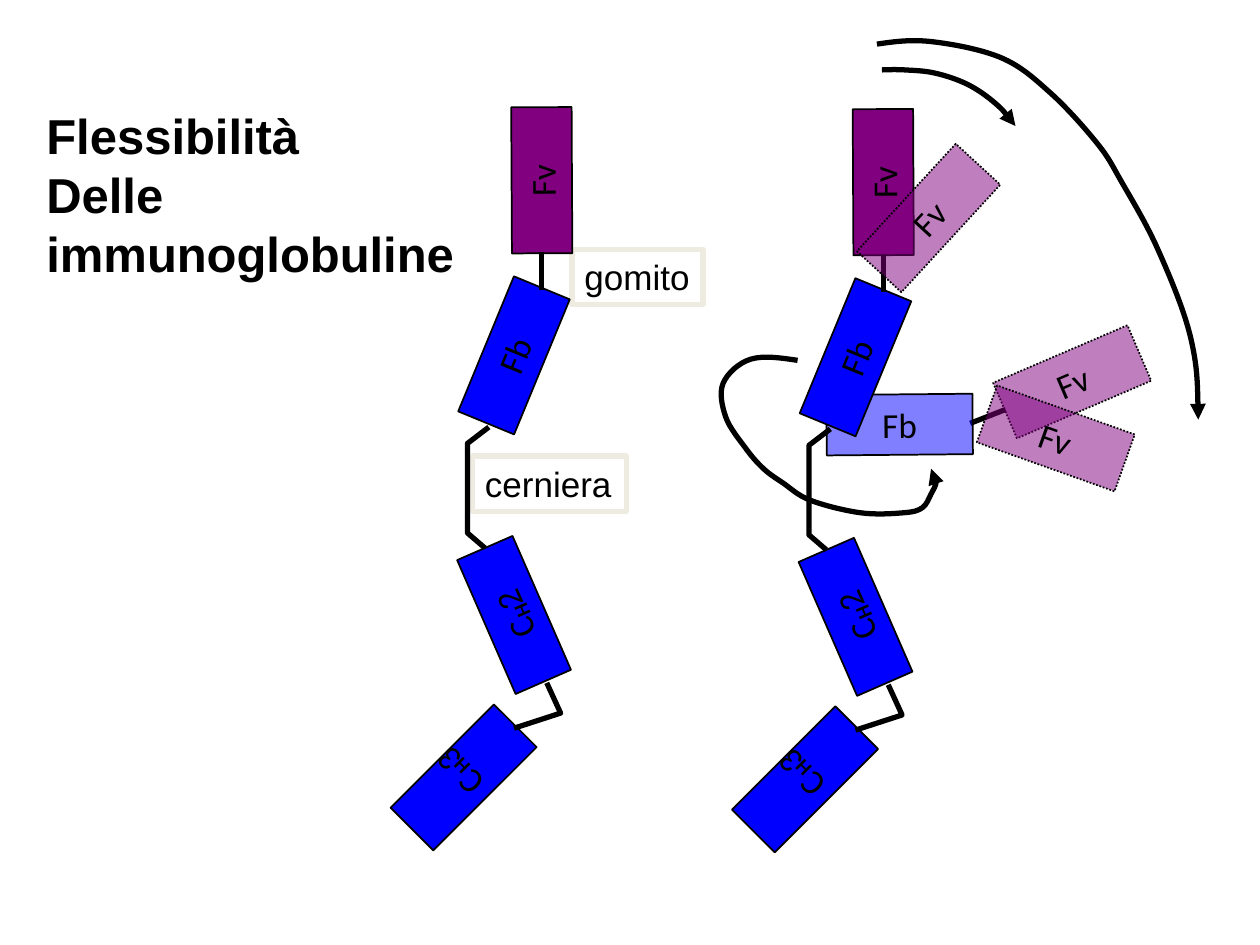
from lxml import etree
from pptx import Presentation
from pptx.dml.color import RGBColor
from pptx.enum.dml import MSO_LINE
from pptx.enum.shapes import MSO_CONNECTOR, MSO_SHAPE
from pptx.enum.text import MSO_ANCHOR, MSO_AUTO_SIZE, PP_ALIGN
from pptx.oxml.ns import qn
from pptx.util import Inches, Pt

RECTANGLE, STRAIGHT = MSO_SHAPE.RECTANGLE, MSO_CONNECTOR.STRAIGHT
SOLID, DOTTED = MSO_LINE.SOLID, MSO_LINE.ROUND_DOT
MIDDLE, TOP = MSO_ANCHOR.MIDDLE, MSO_ANCHOR.TOP
CENTER, LEFT = PP_ALIGN.CENTER, PP_ALIGN.LEFT
GROW, FIXED = MSO_AUTO_SIZE.SHAPE_TO_FIT_TEXT, MSO_AUTO_SIZE.NONE

BLACK, BLUE, PURPLE, CREAM = "000000", "0000FF", "800080", "EEECE1"
COLOUR = RGBColor.from_string

presentation = Presentation()
presentation.slide_width, presentation.slide_height = Inches(10), Inches(7.5)
CELL = presentation.slide_width / 100
slide = presentation.slides.add_slide(presentation.slide_layouts[6])

DOMAIN = {"width": 11.6, "height": 4.8, "rotation": 0, "fill": BLUE, "alpha": 100,
          "line": BLACK, "weight": 1, "dash": SOLID, "font": "Calibri", "size": 20,
          "bold": False, "align": CENTER, "anchor": MIDDLE, "wrap": False, "fit": FIXED}
VARIABLE = DOMAIN | {"fill": PURPLE}
GHOST_FB = DOMAIN | {"alpha": 50}
GHOST_FV = VARIABLE | {"alpha": 50, "dash": DOTTED}
LABEL = DOMAIN | {"height": 4.4, "fill": None, "line": CREAM, "weight": 3,
                  "font": "Arial", "align": LEFT, "anchor": TOP, "fit": GROW}
TITLE = LABEL | {"width": 35.4, "height": 15.1, "line": None, "size": 28,
                 "bold": True, "wrap": True}


def add_box(paragraphs, left, top, style):
    area = [round(CELL * value) for value in (left, top, style["width"], style["height"])]
    if style["line"]:
        shape = slide.shapes.add_shape(RECTANGLE, *area)
        shape.shadow.inherit = False
        shape.rotation = style["rotation"]
        shape.line.color.rgb = COLOUR(style["line"])
        for name, value in {"width": Pt(style["weight"]), "dash_style": style["dash"]}.items():
            setattr(shape.line, name, value)
        shape.fill.background()
    else:
        shape = slide.shapes.add_textbox(*area)
    if style["fill"]:
        shape.fill.solid()
        shape.fill.fore_color.rgb = COLOUR(style["fill"])
        if style["alpha"] < 100:
            fill_colour = shape._element.spPr.find(qn("a:solidFill"))[0]
            etree.SubElement(fill_colour, qn("a:alpha")).set("val", str(style["alpha"] * 1000))
    frame = shape.text_frame
    for name, value in {"word_wrap": style["wrap"], "auto_size": style["fit"],
                        "vertical_anchor": style["anchor"]}.items():
        setattr(frame, name, value)
    for index, parts in enumerate(paragraphs):
        paragraph = frame.add_paragraph() if index else frame.paragraphs[0]
        paragraph.alignment = style["align"]
        for part in parts:
            run = paragraph.add_run()
            run.text = part
            run.font.color.rgb = COLOUR(BLACK)
            is_subscript = part == "H"
            for name, value in {"name": style["font"], "size": Pt(style["size"]),
                                "bold": style["bold"] or is_subscript}.items():
                setattr(run.font, name, value)
            if is_subscript:
                run._r.get_or_add_rPr().set("baseline", "-6000")
    return shape


def add_path(points, curved=False):
    start, *rest = [(round(CELL * x), round(CELL * y)) for x, y in points]
    if len(rest) == 1:
        shape = slide.shapes.add_connector(STRAIGHT, *start, *rest[0])
        etree.SubElement(shape._element.spPr, qn("a:effectLst"))
    else:
        knots = [start, *rest]
        if curved:
            handles = []
            for before, knot, after in zip(knots, knots[1:], knots[2:]):
                pull = [(b - a) / 6 for a, b in zip(before, after)]
                handles += [[k - p for k, p in zip(knot, pull)], knot,
                            [k + p for k, p in zip(knot, pull)]]
            first = [(a + b) / 2 for a, b in zip(start, handles[0])]
            last = [(a + b) / 2 for a, b in zip(handles[-1], knots[-1])]
            rest = [first, *handles, last, knots[-1]]
        builder = slide.shapes.build_freeform(*start)
        builder.add_line_segments(rest, close=False)
        shape = builder.convert_to_shape()
        shape.shadow.inherit = False
        shape.fill.background()
    shape.line.color.rgb = COLOUR(BLACK)
    shape.line.width = Pt(3)
    if curved:
        outline = shape._element.spPr.find(".//" + qn("a:path"))
        segments = outline.findall(qn("a:lnTo"))
        for index, segment in enumerate(segments):
            if index % 3 == 0:
                curve = etree.SubElement(outline, qn("a:cubicBezTo"))
            curve.append(segment[0])
            outline.remove(segment)
        line = shape._element.spPr.find(qn("a:ln"))
        etree.SubElement(line, qn("a:tailEnd")).set("type", "triangle")


arm_swing = [(69.6, 3.5), (73.9, 3.3), (79.5, 4.6), (83.4, 7.4), (87.1, 11.4),
             (89, 14.4), (91.9, 19.8), (94.5, 26.8), (95.1, 33.3)]
elbow_swing = [(70, 5.55), (71.8, 5.55), (74.2, 5.8), (76.8, 6.7), (79, 8.2), (80.6, 10)]
hinge_swing = [(63.3, 28.6), (59.6, 28.5), (57.4, 30.4), (57.6, 33.1), (59.2, 35.6),
               (60.6, 37.2), (62.1, 38.3), (64.3, 39.7), (68.3, 40.7), (71.7, 40.7),
               (73.2, 40.3), (73.9, 39.2), (74.3, 38.2), (73.9, 37.2)]

chain_domains = [("CH3", 31, 59.3, 315, DOMAIN), ("CH2", 35, 46.4, 246.4, DOMAIN),
                 ("Fb", 35, 25.8, 292.4, DOMAIN), ("Fv", 37.2, 11.9, 269.7, VARIABLE)]
tail_link = [(40.8, 57.8), (44.5, 56.6), (43.4, 54.2)]
hinge_link = [(38.5, 43.5), (37.1, 42.3), (37.1, 35.2), (38.8, 33.9)]
elbow_link = [(43, 23), (43, 20)]
left_chain, right_chain = (0, 0), (27.1, 0.15)

add_path([(77, 33.6), (79.8, 32.5)])
add_box([["Fb"]], 65.6, 31.3, GHOST_FB | {"rotation": 359.5})
add_box([["Fv"]], 79.3, 27.9, GHOST_FV | {"rotation": 336.8})
add_path(arm_swing, curved=True)

for shift_x, shift_y in (right_chain, left_chain):
    for name, left, top, rotation, style in chain_domains:
        parts = list(name) if "H" in name else [name]
        box = add_box([parts], left + shift_x, top + shift_y, style | {"rotation": rotation})
        if name == "CH3":
            body = box.text_frame._txBody.bodyPr
            for attribute, value in {"rot": "10800000", "vert": "eaVert"}.items():
                body.set(attribute, value)
    for link in (tail_link, hinge_link, elbow_link):
        add_path([(x + shift_x, y + shift_y) for x, y in link])
    if (shift_x, shift_y) == right_chain:
        add_box([["Fv"]], 67.9, 14.9, GHOST_FV | {"rotation": 312.6})
        add_path(elbow_swing, curved=True)
        add_box([["Fv"]], 78, 32.4, GHOST_FV | {"rotation": 19.6})
        add_path(hinge_swing, curved=True)
        for word, left, top, width in [("cerniera", 37.5, 36.2, 12.2),
                                       ("gomito", 45.4, 19.8, 10.4)]:
            add_box([[word]], left, top, LABEL | {"width": width})

add_box([["Flessibilità"], ["Delle immunoglobuline"]], 2.7, 7.9, TITLE)

presentation.save("out.pptx")
